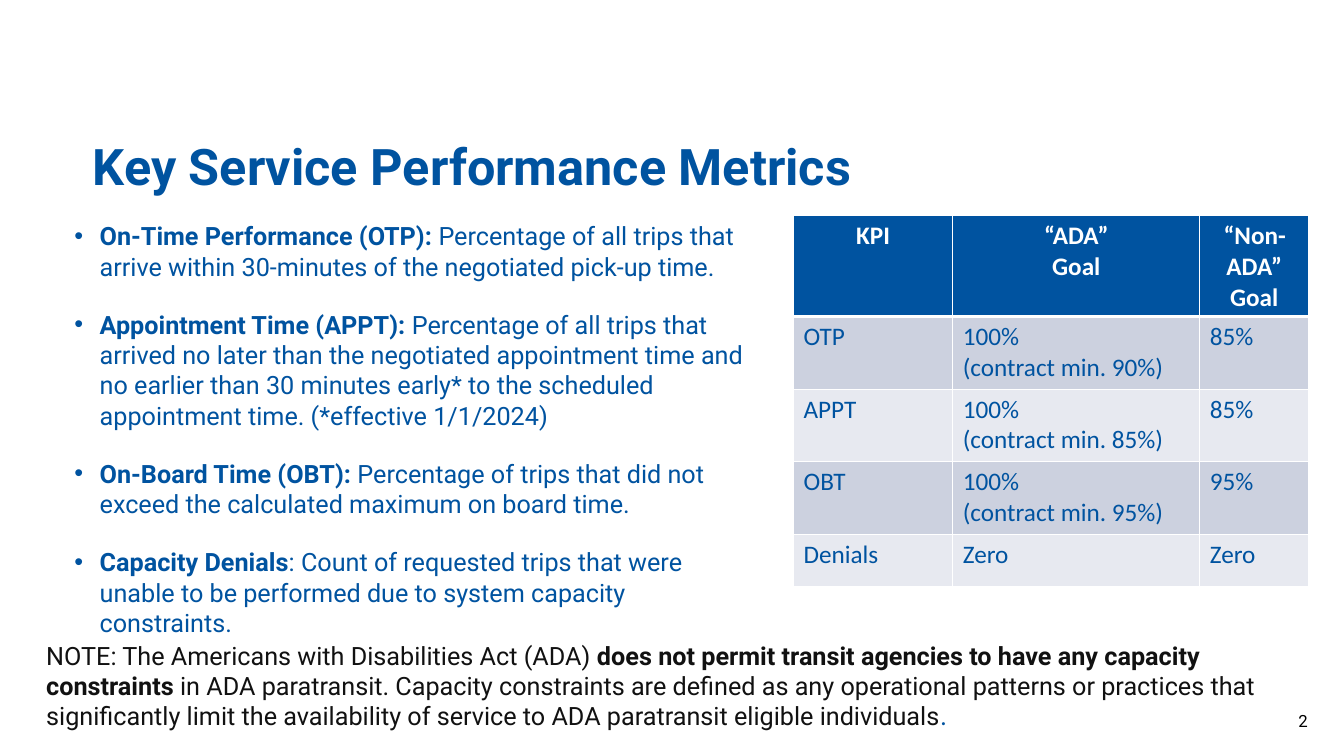
"""Build the slide of key service performance metrics."""
from dataclasses import dataclass

from lxml import etree
from pptx import Presentation
from pptx import util as u
from pptx.dml import color
from pptx.enum import text
from pptx.oxml import ns

BLUE, WHITE, BLACK, NOTE_INK = "0053A0", "FFFFFF", "000000", "111111"
BANDS = ("CCD1DF", "E7E9F0")


@dataclass
class Metric:
    name: str
    meaning: str


@dataclass
class Span:
    words: str
    bold: bool = False
    ink: str = BLUE
    face: str = "Roboto"
    size: float = 18


@dataclass
class Box:
    left: float
    top: float
    width: float
    height: float
    insets: tuple[float, float, float, float] = (0.1, 0.05, 0.1, 0.05)
    anchor: text.MSO_ANCHOR = text.MSO_ANCHOR.TOP


METRICS = [
    Metric("On-Time Performance (OTP): ",
           "Percentage of all trips that arrive within 30-minutes of the "
           "negotiated pick-up time."),
    Metric("Appointment Time (APPT): ",
           "Percentage of all trips that arrived no later than the negotiated "
           "appointment time and no earlier than 30 minutes early* to the "
           "scheduled appointment time. (*effective 1/1/2024)"),
    Metric("On-Board Time (OBT): ",
           "Percentage of trips that did not exceed the calculated maximum on "
           "board time."),
    Metric("Capacity Denials",
           ": Count of requested trips that were unable to be performed due to "
           "system capacity constraints."),
]
NOTE = [
    Span("NOTE: The Americans with Disabilities Act (ADA) ", ink=NOTE_INK),
    Span("does not permit transit agencies to have any capacity constraints",
         bold=True, ink=NOTE_INK),
    Span(" in ADA paratransit. Capacity constraints are defined as any "
         "operational patterns or practices that significantly limit the "
         "availability of service to ADA paratransit eligible individuals",
         ink=NOTE_INK),
    Span(".", face="Calibri"),
]
GOALS = [
    ("KPI", "“ADA”\nGoal", "“Non-ADA” Goal"),
    ("OTP", "100%\n(contract min. 90%)", "85%"),
    ("APPT", "100%\n(contract min. 85%)", "85%"),
    ("OBT", "100%\n(contract min. 95%)", "95%"),
    ("Denials", "Zero", "Zero"),
]
COLUMN_WIDTHS = (1.58, 2.45, 1.08)
ROW_HEIGHTS = (0.52, 0.72, 0.72, 0.72, 0.52)


def rgb(value: str) -> color.RGBColor:
    """Turn a hex string into a colour."""
    return color.RGBColor.from_string(value)


def style(font, span: Span) -> None:
    """Give a font the look of a span."""
    font.name, font.size, font.bold = span.face, u.Pt(span.size), span.bold
    font.color.rgb = rgb(span.ink)


def add_spans(paragraph, spans: list[Span]) -> None:
    """Append formatted runs to a paragraph."""
    for span in spans:
        run = paragraph.add_run()
        run.text = span.words
        style(run.font, span)


def add_box(slide, box: Box):
    """Add a wrapping text box and return its text frame."""
    frame = slide.shapes.add_textbox(
        *map(u.Inches, (box.left, box.top, box.width, box.height))).text_frame
    frame.word_wrap = True
    frame.vertical_anchor = box.anchor
    (frame.margin_left, frame.margin_top,
     frame.margin_right, frame.margin_bottom) = map(u.Inches, box.insets)
    return frame


def add_bullet(paragraph) -> None:
    """Give a paragraph a hanging round bullet."""
    properties = paragraph._p.get_or_add_pPr()
    properties.set("marL", str(u.Inches(0.25)))
    properties.set("indent", str(-u.Inches(0.25)))
    font = etree.SubElement(properties, ns.qn("a:buFont"))
    font.set("typeface", "Arial")
    etree.SubElement(properties, ns.qn("a:buChar")).set("char", "•")


def add_metrics(slide) -> None:
    """Add the bulleted definitions."""
    frame = add_box(slide, Box(0.64, 2.14, 6.98, 4.04))
    for index, metric in enumerate(METRICS):
        paragraph = frame.add_paragraph() if index else frame.paragraphs[0]
        add_bullet(paragraph)
        paragraph.space_before = u.Pt(10 if index else 0)
        paragraph.space_after = u.Pt(10)
        add_spans(paragraph, [Span(metric.name, bold=True), Span(metric.meaning)])


def add_borders(cell, bottom: float) -> None:
    """Draw white borders round a cell, with the given bottom width."""
    properties = cell._tc.get_or_add_tcPr()
    for side, width in (("L", 1), ("R", 1), ("T", 1), ("B", bottom)):
        line = etree.SubElement(properties, ns.qn(f"a:ln{side}"), w=str(u.Pt(width)))
        fill = etree.SubElement(line, ns.qn("a:solidFill"))
        etree.SubElement(fill, ns.qn("a:srgbClr"), val=WHITE)


def add_goals(slide) -> None:
    """Add the table of goals."""
    table = slide.shapes.add_table(
        len(GOALS), len(COLUMN_WIDTHS), u.Inches(7.87), u.Inches(2.14),
        u.Inches(sum(COLUMN_WIDTHS)), u.Inches(sum(ROW_HEIGHTS))).table
    for column, width in zip(table.columns, COLUMN_WIDTHS):
        column.width = u.Inches(width)
    for index, (row, height, goals) in enumerate(zip(table.rows, ROW_HEIGHTS, GOALS)):
        row.height = u.Inches(height)
        header = index == 0
        for cell, words in zip(row.cells, goals):
            add_borders(cell, 3 if header else 1)
            cell.fill.solid()
            cell.fill.fore_color.rgb = rgb(BLUE if header else BANDS[(index - 1) % 2])
            cell.text_frame.text = words
            for paragraph in cell.text_frame.paragraphs:
                if header:
                    paragraph.alignment = text.PP_ALIGN.CENTER
                for run in paragraph.runs:
                    style(run.font, Span(run.text, header, WHITE if header else BLUE,
                                         "Calibri"))


def main() -> None:
    """Build and save the slide."""
    deck = Presentation()
    deck.slide_width, deck.slide_height = u.Inches(13.33), u.Inches(7.5)
    slide = deck.slides.add_slide(deck.slide_layouts[6])

    title = add_box(slide, Box(0.92, 0.67, 11.5, 1.33, (0, 0.4, 0, 0.05),
                               text.MSO_ANCHOR.BOTTOM)).paragraphs[0]
    title.line_spacing = 0.9
    add_spans(title, [Span("Key Service Performance Metrics", bold=True, size=36)])

    page = add_box(slide, Box(11.37, 6.95, 1.6, 0.4, (0.1, 0.05, 0, 0.05),
                              text.MSO_ANCHOR.MIDDLE)).paragraphs[0]
    page.alignment = text.PP_ALIGN.RIGHT
    add_spans(page, [Span("2", ink=BLACK, size=12)])

    add_metrics(slide)
    add_goals(slide)
    note = add_box(slide, Box(0.36, 6.3, 12.85, 1.31))
    note.auto_size = text.MSO_AUTO_SIZE.SHAPE_TO_FIT_TEXT
    add_spans(note.paragraphs[0], NOTE)
    deck.save("out.pptx")


if __name__ == "__main__":
    main()
